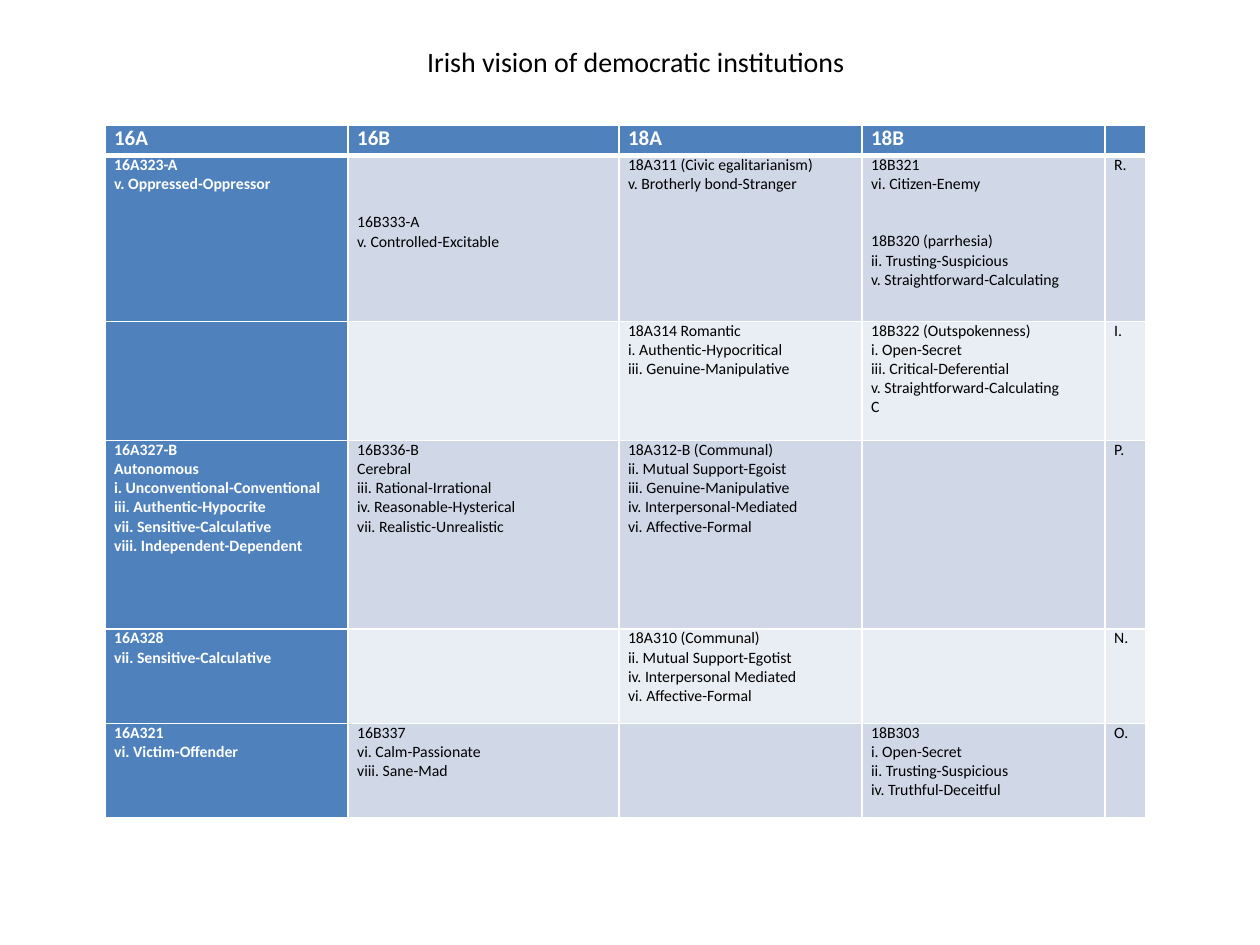
from lxml import etree
from pptx import Presentation
from pptx.dml.color import RGBColor
from pptx.enum import text
from pptx.oxml.ns import qn
from pptx.util import Cm, Pt

TITLE = "Irish vision of democratic institutions"
HEADER = ["16A", "16B", "18A", "18B", ""]
# Each row: the lines of its four columns, then the row's letter
ROWS = [
    [["16A323-A", "v. Oppressed-Oppressor"],
     ["16B333-A", "v. Controlled-Excitable"],
     ["18A311 (Civic egalitarianism)", "v. Brotherly bond-Stranger"],
     ["18B321", "vi. Citizen-Enemy", "18B320 (parrhesia)",
      "ii. Trusting-Suspicious", "v. Straightforward-Calculating"],
     ["R."]],
    [[],
     [],
     ["18A314 Romantic", "i. Authentic-Hypocritical", "iii. Genuine-Manipulative"],
     ["18B322 (Outspokenness)", "i. Open-Secret", "iii. Critical-Deferential",
      "v. Straightforward-Calculating", "C"],
     ["I."]],
    [["16A327-B", "Autonomous", "i. Unconventional-Conventional",
      "iii. Authentic-Hypocrite", "vii. Sensitive-Calculative",
      "viii. Independent-Dependent"],
     ["16B336-B", "Cerebral", "iii. Rational-Irrational",
      "iv. Reasonable-Hysterical", "vii. Realistic-Unrealistic"],
     ["18A312-B (Communal)", "ii. Mutual Support-Egoist", "iii. Genuine-Manipulative",
      "iv. Interpersonal-Mediated", "vi. Affective-Formal"],
     [],
     ["P."]],
    [["16A328", "vii. Sensitive-Calculative"],
     [],
     ["18A310 (Communal)", "ii. Mutual Support-Egotist",
      "iv. Interpersonal Mediated", "vi. Affective-Formal"],
     [],
     ["N."]],
    [["16A321", "vi. Victim-Offender"],
     ["16B337", "vi. Calm-Passionate", "viii. Sane-Mad"],
     [],
     ["18B303", "i. Open-Secret", "ii. Trusting-Suspicious", "iv. Truthful-Deceitful"],
     ["O."]],
]
LINES_ABOVE = {"16B333-A": 3, "18B320 (parrhesia)": 2}
COLUMN_WIDTHS = [4.9, 5.46, 4.9, 4.9, 0.82]
ROW_HEIGHTS = [0.6, 3.35, 2.4, 3.8, 1.9, 1.9]
FONT = "Calibri"
LINE_HEIGHT = 11
BLUE, WHITE, BLACK = "4F81BD", "FFFFFF", "000000"
BANDS = ["D0D8E8", "E9EDF4"]


def rgb(value):
    return RGBColor.from_string(value)


def style(paragraph, size, color, bold=False):
    font = paragraph.font
    font.name, font.size, font.bold = FONT, Pt(size), bold
    font.color.rgb = rgb(color)


def add_borders(cell, bottom_width):
    """Put white lines round a cell; they must precede its fill in the XML."""
    properties = cell._tc.get_or_add_tcPr()
    widths = {"a:lnL": 1, "a:lnR": 1, "a:lnT": 1, "a:lnB": bottom_width}
    for tag, width in widths.items():
        line = etree.SubElement(properties, qn(tag), w=str(Pt(width)))
        fill = etree.SubElement(line, qn("a:solidFill"))
        etree.SubElement(fill, qn("a:srgbClr"), val=WHITE)


def fill_cell(cell, lines, fill, size, color, bold, bottom_width=1):
    add_borders(cell, bottom_width)
    cell.fill.solid()
    cell.fill.fore_color.rgb = rgb(fill)
    cell.margin_left = cell.margin_right = Cm(0.18)
    cell.margin_top = cell.margin_bottom = 0
    cell.text_frame.text = "\n".join(lines)
    for i, paragraph in enumerate(cell.text_frame.paragraphs):
        style(paragraph, size, color, bold)
        gap = Pt(LINE_HEIGHT * LINES_ABOVE.get(paragraph.text, 0))
        if i == 0:
            cell.margin_top = gap
        else:
            paragraph.space_before = gap


def main():
    prs = Presentation()
    prs.slide_width, prs.slide_height = Cm(25.4), Cm(19.05)
    slide = prs.slides.add_slide(prs.slide_layouts[5])

    title = slide.shapes.title
    title.left, title.top, title.width, title.height = Cm(1.5), Cm(0.76), Cm(22.63), Cm(0.97)
    title.text_frame.text = TITLE
    title.text_frame.vertical_anchor = text.MSO_ANCHOR.MIDDLE
    heading = title.text_frame.paragraphs[0]
    heading.alignment = text.PP_ALIGN.CENTER
    style(heading, 16, BLACK)

    table = slide.shapes.add_table(
        len(ROW_HEIGHTS), len(COLUMN_WIDTHS), Cm(2.12), Cm(2.53),
        Cm(sum(COLUMN_WIDTHS)), Cm(sum(ROW_HEIGHTS))).table
    table.first_col = True
    for column, width in zip(table.columns, COLUMN_WIDTHS):
        column.width = Cm(width)
    for row, height in zip(table.rows, ROW_HEIGHTS):
        row.height = Cm(height)

    for c, label in enumerate(HEADER):
        fill_cell(table.cell(0, c), [label], BLUE, 12, WHITE, True, bottom_width=3)
    for r, row in enumerate(ROWS):
        for c, lines in enumerate(row):
            first = c == 0
            fill_cell(table.cell(r + 1, c), lines, BLUE if first else BANDS[r % 2],
                      9, WHITE if first else BLACK, first)

    prs.save("out.pptx")


if __name__ == "__main__":
    main()
